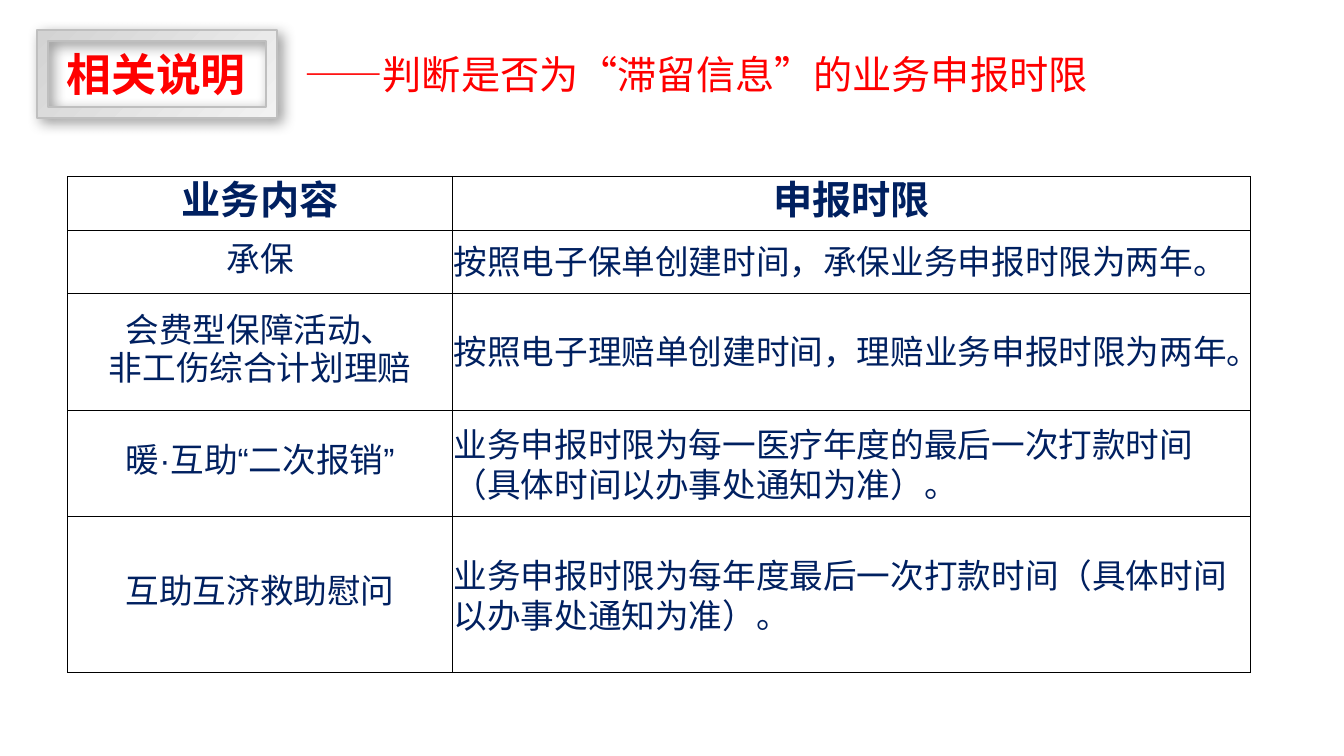
"""Build the slide on filing deadlines for each kind of business."""
from lxml import etree
from pptx import Presentation
from pptx.dml.color import RGBColor
from pptx.enum import shapes, text
from pptx.oxml import ns, parse_xml
from pptx.util import Inches, Pt

SANS, LATIN = "Noto Sans CJK SC", "Arial"
RED, NAVY, BLACK = "FF0000", "002060", "000000"
HEADING = "相关说明"
SUBTITLE = "——判断是否为“滞留信息”的业务申报时限"
HEADERS = ["业务内容", "申报时限"]
NOTICE = "（具体时间以办事处通知为准）。"
DEADLINES = [
    (["承保"], ["按照电子保单创建时间，承保业务申报时限为", "两年", "。"]),
    (["会费型保障活动、", "非工伤综合计划理赔"],
     ["按照电子理赔单创建时间，理赔业务申报时限为", "两年", "。"]),
    (["暖·互助“二次报销”"],
     ["业务申报时限为", "每一医疗年度的最后一次打款时间", NOTICE]),
    (["互助互济救助慰问"],
     ["业务申报时限为", "每年度最后一次打款时间", NOTICE]),
]
COLUMN_WIDTHS = [3.82, 7.91]
ROW_HEIGHTS = [0.53, 0.63, 1.16, 1.05, 1.55]
CELL_FORMAT = {
    "vertical_anchor": text.MSO_ANCHOR.MIDDLE,
    "margin_left": Inches(0.01), "margin_right": Inches(0.01),
    "margin_top": Inches(0.01), "margin_bottom": Inches(0.05),
}
SHADOW = (
    f'<a:effectLst {ns.nsdecls("a")}>'
    f'<a:outerShdw blurRad="{Pt(10)}" dist="{Pt(4)}" dir="2700000" algn="tl" rotWithShape="0">'
    f'<a:srgbClr val="{BLACK}"><a:alpha val="40000"/></a:srgbClr>'
    '</a:outerShdw></a:effectLst>'
)


def color(value):
    return RGBColor.from_string(value)


def box(*lengths):
    return [Inches(length) for length in lengths]


def set_format(target, values):
    for name, value in values.items():
        setattr(target, name, value)


def add_run(paragraph, words, size, name, shade, bold=False):
    run = paragraph.add_run()
    run.text = words
    set_format(run.font, {"size": Pt(size), "name": name, "bold": bold})
    run.font.color.rgb = color(shade)
    east_asian = etree.SubElement(run.font._element, ns.qn("a:ea"))
    east_asian.set("typeface", name)


def add_frame(slide):
    frame = slide.shapes.add_shape(shapes.MSO_SHAPE.FRAME, *box(0.37, 0.3, 2.38, 0.87))
    frame.fill.gradient()
    frame.fill.gradient_angle = 315
    for stop, shade in zip(frame.fill.gradient_stops, ["D3D3D3", "F2F2F2"]):
        stop.color.rgb = color(shade)
    for stop, position in zip(frame.fill.gradient_stops, [0, 1]):
        stop.position = position
    frame.line.color.rgb = color("BFBFBF")
    frame.line.width = Pt(1.5)
    frame._element.spPr.append(parse_xml(SHADOW))


def add_heading(slide):
    title = slide.shapes.title
    place = dict(zip(["left", "top", "width", "height"], box(0.56, 0.41, 1.99, 0.64)))
    set_format(title, place)
    set_format(title.text_frame, {
        "word_wrap": False, "vertical_anchor": text.MSO_ANCHOR.TOP,
        "auto_size": text.MSO_AUTO_SIZE.SHAPE_TO_FIT_TEXT})
    paragraph = title.text_frame.paragraphs[0]
    set_format(paragraph, {"alignment": text.PP_ALIGN.LEFT, "line_spacing": 1.0})
    add_run(paragraph, HEADING, 32, SANS, RED, True)


def add_subtitle(slide):
    frame = slide.shapes.add_textbox(*box(3.02, 0.5, 8.18, 0.47)).text_frame
    set_format(frame, {
        "word_wrap": True, "auto_size": text.MSO_AUTO_SIZE.SHAPE_TO_FIT_TEXT,
        "margin_left": 0, "margin_top": 0, "margin_right": 0, "margin_bottom": 0})
    add_run(frame.paragraphs[0], SUBTITLE, 28, SANS, RED)


def add_borders(cell):
    properties = cell._tc.get_or_add_tcPr()
    for index, side in enumerate(["lnL", "lnR", "lnT", "lnB"]):
        properties.insert(index, parse_xml(
            f'<a:{side} {ns.nsdecls("a")} w="{Pt(0.5)}"><a:solidFill>'
            f'<a:srgbClr val="{BLACK}"/></a:solidFill></a:{side}>'))


def fill_cell(cell, paragraphs, size=24, bold=False, centered=True):
    set_format(cell, CELL_FORMAT)
    cell.fill.background()
    add_borders(cell)
    frame = cell.text_frame
    for index, runs in enumerate(paragraphs):
        paragraph = frame.add_paragraph() if index else frame.paragraphs[0]
        paragraph.alignment = text.PP_ALIGN.CENTER if centered else text.PP_ALIGN.LEFT
        for position, words in enumerate(runs):
            add_run(paragraph, words, size, SANS if position == 1 else LATIN, NAVY, bold)


def add_deadlines(slide):
    table = slide.shapes.add_table(
        len(ROW_HEIGHTS), len(COLUMN_WIDTHS),
        *box(0.67, 1.75, sum(COLUMN_WIDTHS), sum(ROW_HEIGHTS))).table
    set_format(table, {"first_row": False, "horz_banding": False})
    for column, width in zip(table.columns, COLUMN_WIDTHS):
        column.width = Inches(width)
    for row, height in zip(table.rows, ROW_HEIGHTS):
        row.height = Inches(height)
    for index, words in enumerate(HEADERS):
        fill_cell(table.cell(0, index), [[words]], size=28, bold=True)
    for index, (business, deadline) in enumerate(DEADLINES, start=1):
        fill_cell(table.cell(index, 0), [[line] for line in business])
        fill_cell(table.cell(index, 1), [deadline], centered=False)


def main():
    presentation = Presentation()
    set_format(presentation, {"slide_width": Inches(13.33), "slide_height": Inches(7.5)})
    slide = presentation.slides.add_slide(presentation.slide_layouts[5])
    add_frame(slide)
    add_heading(slide)
    add_subtitle(slide)
    add_deadlines(slide)
    presentation.save("out.pptx")


if __name__ == "__main__":
    main()
